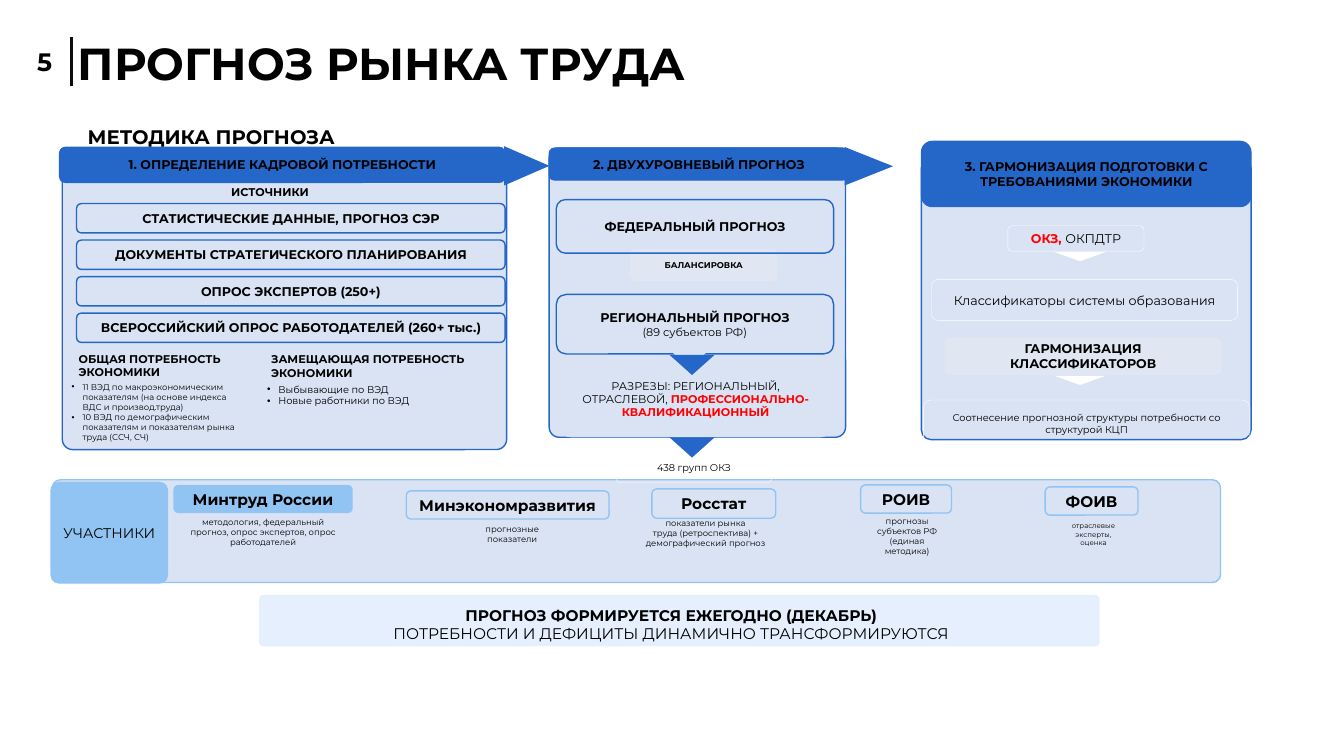
from dataclasses import dataclass

from lxml.etree import SubElement
from pptx import Presentation
from pptx.dml.color import RGBColor
from pptx.enum.shapes import MSO_CONNECTOR, MSO_SHAPE
from pptx.enum.text import MSO_ANCHOR, MSO_AUTO_SIZE, PP_ALIGN
from pptx.oxml.ns import qn
from pptx.util import Cm, Pt


@dataclass(frozen=True)
class Theme:
    font: str = "Montserrat"
    black: str = "000000"
    divider: str = "0D0D0D"
    white: str = "FFFFFF"
    red: str = "FF0000"
    blue: str = "2567C9"
    sky: str = "91C4F2"
    pale: str = "DAE3F3"
    grey: str = "F2F2F2"
    footer: str = "6EA5F4"
    title: float = 32
    number: float = 18
    subtitle: float = 14
    name: float = 11
    label: float = 10
    block: float = 9
    detail: float = 8
    note: float = 7
    caption: float = 6
    tiny: float = 5


theme = Theme()


def add_block(box, fill=None, line=None, width=1, preset=MSO_SHAPE.ROUNDED_RECTANGLE,
              radius=None, alpha=None, rotation=0):
    block = slide.shapes.add_shape(preset, *map(Cm, box))
    block.shadow.inherit = False
    block.rotation = rotation
    if radius is not None:
        block.adjustments[0] = radius
    if fill:
        block.fill.solid()
        block.fill.fore_color.rgb = RGBColor.from_string(fill)
    else:
        block.fill.background()
    if alpha:
        color = block.element.spPr.find(qn("a:solidFill"))[0]
        SubElement(color, qn("a:alpha")).set("val", str(alpha * 1000))
    if line:
        block.line.color.rgb = RGBColor.from_string(line)
        block.line.width = Pt(width)
    else:
        block.line.fill.background()
    return block


def write(target, *paragraphs, size=theme.block, bold=False, color=theme.black,
          align=PP_ALIGN.CENTER, anchor=MSO_ANCHOR.MIDDLE, bullet=None):
    frame = target.text_frame
    frame.word_wrap = True
    frame.auto_size = MSO_AUTO_SIZE.NONE
    frame.vertical_anchor = anchor
    for index, content in enumerate(paragraphs):
        paragraph = frame.add_paragraph() if index else frame.paragraphs[0]
        paragraph.alignment = align
        paragraph.space_before = Pt(0)
        if bullet:
            properties = paragraph._p.get_or_add_pPr()
            properties.set("marL", str(Cm(0.28)))
            properties.set("indent", str(-Cm(0.28)))
            SubElement(properties, qn("a:buChar")).set("char", bullet)
        for text, style in [(content, {})] if isinstance(content, str) else content:
            for order, part in enumerate(text.split("\n")):
                if order:
                    paragraph.add_line_break()
                run = paragraph.add_run()
                run.text = part
                run.font.name = theme.font
                run.font.size = Pt(style.get("size", size))
                run.font.bold = style.get("bold", bold)
                run.font.color.rgb = RGBColor.from_string(style.get("color", color))


deck = Presentation()
deck.slide_width, deck.slide_height = Cm(33.87), Cm(19.05)
slide = deck.slides.add_slide(deck.slide_layouts[4])
title, total_heading, total_list, replacement_heading, replacement_list = slide.placeholders

divider = slide.shapes.add_connector(MSO_CONNECTOR.STRAIGHT, Cm(1.8), Cm(0.94), Cm(1.8), Cm(2.16))
divider.line.color.rgb = RGBColor.from_string(theme.divider)
divider.line.width = Pt(2.25)
SubElement(divider.element.spPr, qn("a:effectLst"))
write(add_block((0.3, 0.94, 1.65, 1.22)), "5", size=theme.number, bold=True)

title.left, title.top, title.width, title.height = map(Cm, (1.96, 0.84, 23.29, 1.4))
title.text_frame.margin_left = title.text_frame.margin_right = 0
title.text_frame.margin_top, title.text_frame.margin_bottom = Cm(0.05), 0
write(title, "ПРОГНОЗ РЫНКА ТРУДА", size=theme.title, bold=True,
      align=PP_ALIGN.LEFT, anchor=MSO_ANCHOR.TOP)

subtitle = slide.shapes.add_textbox(*map(Cm, (1.96, 3.02, 18.36, 1.24)))
write(subtitle, "МЕТОДИКА ПРОГНОЗА", size=theme.subtitle, bold=True,
      align=PP_ALIGN.LEFT, anchor=MSO_ANCHOR.TOP)

stages = [
    ((1.57, 3.84, 11.2, 7.49), (1.5, 3.71, 11.23, 0.89), "1. ОПРЕДЕЛЕНИЕ КАДРОВОЙ ПОТРЕБНОСТИ"),
    ((13.84, 3.73, 7.47, 7.29), (13.84, 3.73, 7.54, 0.81), "2. ДВУХУРОВНЕВЫЙ ПРОГНОЗ"),
    ((23.22, 3.99, 8.31, 7.09), (23.22, 3.56, 8.31, 1.65),
     "3. ГАРМОНИЗАЦИЯ ПОДГОТОВКИ С ТРЕБОВАНИЯМИ ЭКОНОМИКИ"),
]
for panel, header, stage in stages:
    add_block(panel, theme.pale, theme.blue, radius=0.035)
    write(add_block(header, theme.blue, theme.blue, 0.75), stage, bold=True)

sources_heading = slide.shapes.add_textbox(*map(Cm, (1.47, 4.55, 10.67, 0.61)))
write(sources_heading, "ИСТОЧНИКИ", size=theme.detail, bold=True, anchor=MSO_ANCHOR.TOP)
sources = [
    "СТАТИСТИЧЕСКИЕ ДАННЫЕ, ПРОГНОЗ СЭР",
    "ДОКУМЕНТЫ СТРАТЕГИЧЕСКОГО ПЛАНИРОВАНИЯ",
    "ОПРОС ЭКСПЕРТОВ (250+)",
    "ВСЕРОССИЙСКИЙ ОПРОС РАБОТОДАТЕЛЕЙ (260+ тыс.)",
]
for row, source in enumerate(sources):
    write(add_block((1.93, 5.13 + 0.92 * row, 10.8, 0.74), line=theme.blue), source, bold=True)

needs = [
    (total_heading, (1.73, 8.74, 5.18, 0.94), ["ОБЩАЯ ПОТРЕБНОСТЬ ЭКОНОМИКИ"],
     theme.detail, True, None),
    (total_list, (1.55, 9.5, 4.9, 2.03),
     ["11 ВЭД по макроэкономическим показателям (на основе индекса ВДС и производ.труда)",
      "10 ВЭД по демографическим показателям и показателям рынка труда (ССЧ, СЧ)"],
     theme.caption, False, "•"),
    (replacement_heading, (6.58, 8.76, 5.59, 0.94), ["ЗАМЕЩАЮЩАЯ ПОТРЕБНОСТЬ ЭКОНОМИКИ"],
     theme.detail, True, None),
    (replacement_list, (6.48, 9.53, 4.72, 0.86), ["Выбывающие по ВЭД", "Новые работники по ВЭД"],
     theme.note, False, "•"),
]
for need, box, lines, size, bold, bullet in needs:
    need.left, need.top, need.width, need.height = map(Cm, box)
    write(need, *lines, size=size, bold=bold, bullet=bullet,
          align=PP_ALIGN.LEFT, anchor=MSO_ANCHOR.TOP)
    need.element.getparent().append(need.element)

write(add_block((15.88, 6.27, 3.71, 0.81), theme.grey, alpha=28), "БАЛАНСИРОВКА",
      size=theme.caption, bold=True)
write(add_block((14.02, 5.03, 6.99, 1.35), line=theme.blue), "ФЕДЕРАЛЬНЫЙ ПРОГНОЗ", bold=True)
write(add_block((14.02, 7.42, 6.99, 1.5), line=theme.blue),
      [("РЕГИОНАЛЬНЫЙ ПРОГНОЗ\n", {"bold": True}), ("(89 субъектов РФ)", {"size": theme.detail})])
write(add_block((14.07, 9.09, 6.93, 1.93), theme.pale),
      [("РАЗРЕЗЫ: РЕГИОНАЛЬНЫЙ, ОТРАСЛЕВОЙ, ", {}),
       ("ПРОФЕССИОНАЛЬНО-КВАЛИФИКАЦИОННЫЙ", {"bold": True, "color": theme.red})],
      size=theme.detail)

write(add_block((25.4, 5.69, 3.43, 0.64), line=theme.white, width=0.25),
      [("ОКЗ, ", {"bold": True, "color": theme.red}), ("ОКПДТР", {})])
write(add_block((23.47, 7.04, 7.72, 1.04), line=theme.white, width=0.25),
      "Классификаторы системы образования")
write(add_block((23.8, 8.51, 6.99, 0.94), theme.grey, alpha=28),
      "ГАРМОНИЗАЦИЯ КЛАССИФИКАТОРОВ", bold=True)
write(add_block((23.27, 10.08, 8.23, 1.19), line=theme.white, width=0.25),
      "Соотнесение прогнозной структуры потребности со структурой КЦП", size=theme.note)

add_block((1.32, 12.09, 29.44, 2.59), theme.pale, theme.sky, radius=0.078)
write(add_block((1.27, 12.14, 2.97, 2.57), theme.sky, radius=0.086), "УЧАСТНИКИ", size=theme.label)
participants = [
    ("Минтруд России", (4.37, 12.22, 4.52, 0.71), theme.sky, None, theme.caption,
     "методология, федеральный прогноз, опрос экспертов, опрос работодателей",
     (4.37, 12.85, 4.52, 1.02)),
    ("Минэкономразвития", (10.24, 12.37, 5.11, 0.71), None, theme.sky, theme.caption,
     "прогнозные показатели", (11.4, 13.03, 3.02, 0.99)),
    ("Росстат", (16.43, 12.32, 3.12, 0.74), None, theme.sky, theme.caption,
     "показатели рынка\nтруда (ретроспектива) + демографический прогноз",
     (15.67, 12.88, 4.22, 1.19)),
    ("РОИВ", (21.69, 12.22, 2.29, 0.71), None, theme.sky, theme.caption,
     "прогнозы субъектов РФ (единая методика)", (21.64, 12.83, 2.44, 0.99)),
    ("ФОИВ", (26.34, 12.27, 2.34, 0.71), None, theme.sky, theme.tiny,
     "отраслевые эксперты, оценка", (26.52, 12.98, 2.08, 0.89)),
]
for participant, box, fill, line, size, role, role_box in participants:
    write(add_block(box, fill, line), participant, size=theme.name, bold=True)
    write(add_block(role_box), role, size=size, anchor=MSO_ANCHOR.TOP)

write(add_block((15.52, 11.4, 3.94, 0.76), line=theme.white, width=0.25),
      "438 групп ОКЗ", size=theme.note)

pointers = [
    ((12.78, 3.61, 0.99, 1.14), 90, theme.blue),
    ((21.41, 3.58, 0.97, 1.22), 90, theme.blue),
    ((16.89, 8.84, 0.97, 0.38), 180, theme.pale),
    ((16.87, 8.94, 1.14, 0.51), 180, theme.blue),
    ((16.87, 11.02, 1.14, 0.51), 180, theme.blue),
    ((26.57, 6.35, 1.3, 0.23), 180, theme.white),
    ((26.57, 9.47, 1.3, 0.23), 180, theme.white),
]
for box, rotation, fill in pointers:
    add_block(box, fill, preset=MSO_SHAPE.ISOSCELES_TRIANGLE, rotation=rotation)

add_block((6.53, 14.99, 21.18, 1.3), theme.footer, radius=0.085, alpha=17)
conclusion = slide.shapes.add_textbox(*map(Cm, (4.04, 15.14, 25.76, 1.19)))
write(conclusion, [("ПРОГНОЗ ФОРМИРУЕТСЯ ЕЖЕГОДНО (ДЕКАБРЬ)", {"bold": True})],
      "ПОТРЕБНОСТИ И ДЕФИЦИТЫ ДИНАМИЧНО ТРАНСФОРМИРУЮТСЯ",
      size=theme.name, anchor=MSO_ANCHOR.TOP)

deck.save("out.pptx")
